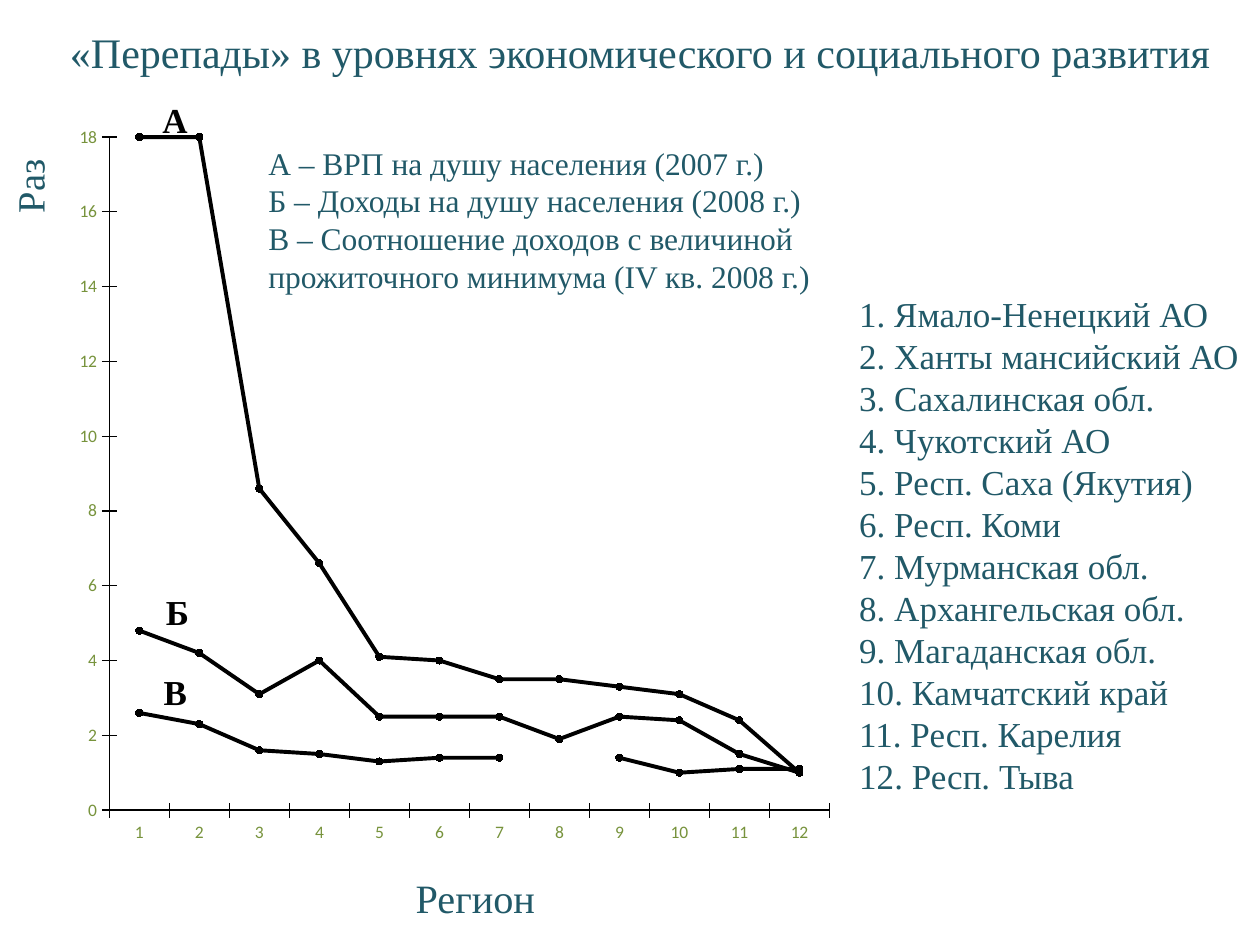
from lxml.etree import SubElement
from pptx import Presentation
from pptx.chart.data import CategoryChartData as ChartData
from pptx.dml.color import RGBColor as RGB
from pptx.enum.chart import XL_CHART_TYPE as CT, XL_MARKER_STYLE as MS, XL_TICK_MARK as TM
from pptx.enum.text import MSO_ANCHOR as ANCHOR, MSO_AUTO_SIZE as AUTO, PP_ALIGN as AL
from pptx.oxml.ns import qn
from pptx.util import Pt

COLORS = {"text": "215968", "ink": "000000", "axis": "77933C"}
TITLE = "«Перепады» в уровнях экономического и социального развития"
REGIONS = [
    "Ямало-Ненецкий АО", "Ханты мансийский АО", "Сахалинская обл.", "Чукотский АО",
    "Респ. Саха (Якутия)", "Респ. Коми", "Мурманская обл.", "Архангельская обл.",
    "Магаданская обл.", "Камчатский край", "Респ. Карелия", "Респ. Тыва",
]
KEY = [
    "А – ВРП на душу населения (2007 г.)",
    "Б – Доходы на душу населения (2008 г.)",
    "В – Соотношение доходов с величиной прожиточного минимума (IV кв. 2008 г.)",
]
SERIES = {
    "В": (2.6, 2.3, 1.6, 1.5, 1.3, 1.4, 1.4, None, 1.4, 1, 1.1, 1.1),
    "А": (18, 18, 8.6, 6.6, 4.1, 4, 3.5, 3.5, 3.3, 3.1, 2.4, 1),
    "Б": (4.8, 4.2, 3.1, 4, 2.5, 2.5, 2.5, 1.9, 2.5, 2.4, 1.5, 1),
}
LETTERS = {"А": (85.7, 52.6), "Б": (87.8, 334), "В": (86.4, 379.4)}
PLOT = {"x": 0.086, "y": 0.037, "w": 0.882, "h": 0.866}


def color(name):
    """Return a palette colour."""
    return RGB.from_string(COLORS[name])


def place(sp, x, y, w, h):
    """Move and size a shape, in points."""
    sp.left, sp.top, sp.width, sp.height = Pt(x), Pt(y), Pt(w), Pt(h)


def write(sp, lines, size=20, fill="text", bold=False, align=AL.LEFT, anchor=ANCHOR.TOP, hang=0):
    """Write formatted paragraphs into a shape."""
    tf = sp.text_frame
    tf.word_wrap, tf.auto_size, tf.vertical_anchor = True, AUTO.NONE, anchor
    for i, line in enumerate(lines):
        p = tf.add_paragraph() if i else tf.paragraphs[0]
        p.alignment, p.space_before = align, Pt(0)
        if hang:
            pPr = p._p.get_or_add_pPr()
            pPr.set("marL", str(Pt(hang)))
            pPr.set("indent", str(-Pt(hang)))
            SubElement(pPr, qn("a:buNone"))
        r = p.add_run()
        r.text = line
        r.font.name, r.font.size, r.font.bold = "Times New Roman", Pt(size), bold
        r.font.color.rgb = color(fill)


def add_text(s, box, lines, **fmt):
    """Add a text box and return it."""
    sp = s.shapes.add_textbox(*map(Pt, box))
    write(sp, lines, **fmt)
    return sp


def style_axis(axis):
    """Give an axis a thin line and crossing ticks."""
    axis.has_major_gridlines = False
    axis.major_tick_mark = TM.CROSS
    axis.minor_tick_mark = TM.NONE
    axis.format.line.width = Pt(0.75)
    axis.format.line.color.rgb = color("ink")


def set_plot_area(chart):
    """Fix the inner plot area as fractions of the chart."""
    area = chart._chartSpace.chart.plotArea
    layout = area.find(qn("c:layout"))
    if layout is None:
        layout = SubElement(area, qn("c:layout"))
        area.insert(0, layout)
    manual = SubElement(layout, qn("c:manualLayout"))
    modes = {"layoutTarget": "inner", "xMode": "edge", "yMode": "edge"}
    for tag, val in {**modes, **PLOT}.items():
        SubElement(manual, qn(f"c:{tag}")).set("val", str(val))


def add_line_chart(s, *box):
    """Add the chart of gaps between regions."""
    data = ChartData()
    data.categories = [str(n) for n in range(1, len(REGIONS) + 1)]
    for name, vals in SERIES.items():
        data.add_series(name, vals)
    chart = s.shapes.add_chart(CT.LINE_MARKERS, *map(Pt, box), data).chart
    chart.has_legend = chart.has_title = False
    chart.font.name, chart.font.size = "Calibri", Pt(10)
    chart.font.color.rgb = color("axis")
    style_axis(chart.category_axis)
    va = chart.value_axis
    style_axis(va)
    va.minimum_scale, va.maximum_scale, va.major_unit = 0, 18, 2
    chart.plots[0].vary_by_categories = False
    for ser in chart.plots[0].series:
        ser.smooth = False
        ser.format.line.width = Pt(2.25)
        ser.format.line.color.rgb = color("ink")
        ser.marker.style, ser.marker.size = MS.CIRCLE, 4
        fmt = ser.marker.format
        fmt.fill.solid()
        fmt.fill.fore_color.rgb = fmt.line.color.rgb = color("ink")
    set_plot_area(chart)


def main():
    """Build and save the slide."""
    prs = Presentation()
    prs.slide_width, prs.slide_height = Pt(720), Pt(540)
    s = prs.slides.add_slide(prs.slide_layouts[1])
    title, body = s.placeholders
    place(title, 11.5, 11.5, 708.5, 36)
    write(title, [TITLE], size=24, align=AL.CENTER)
    place(body, 483.8, 163.4, 236.2, 298)
    write(body, [f"{n}. {name}" for n, name in enumerate(REGIONS, 1)], hang=36)
    add_line_chart(s, 22.3, 61.9, 466.6, 444.2)
    add_text(s, (230.4, 495.4, 95.8, 36), ["Регион"], size=23)
    add_text(s, (-10.8, 84.2, 55.4, 33.8), ["Раз"], size=22).rotation = 270
    for letter, (x, y) in LETTERS.items():
        add_text(s, (x, y, 45.4, 31.7), [letter], fill="ink", bold=True)
    add_text(s, (146.2, 78.5, 331.9, 94.3), KEY, size=18)
    prs.save("out.pptx")


if __name__ == "__main__":
    main()
